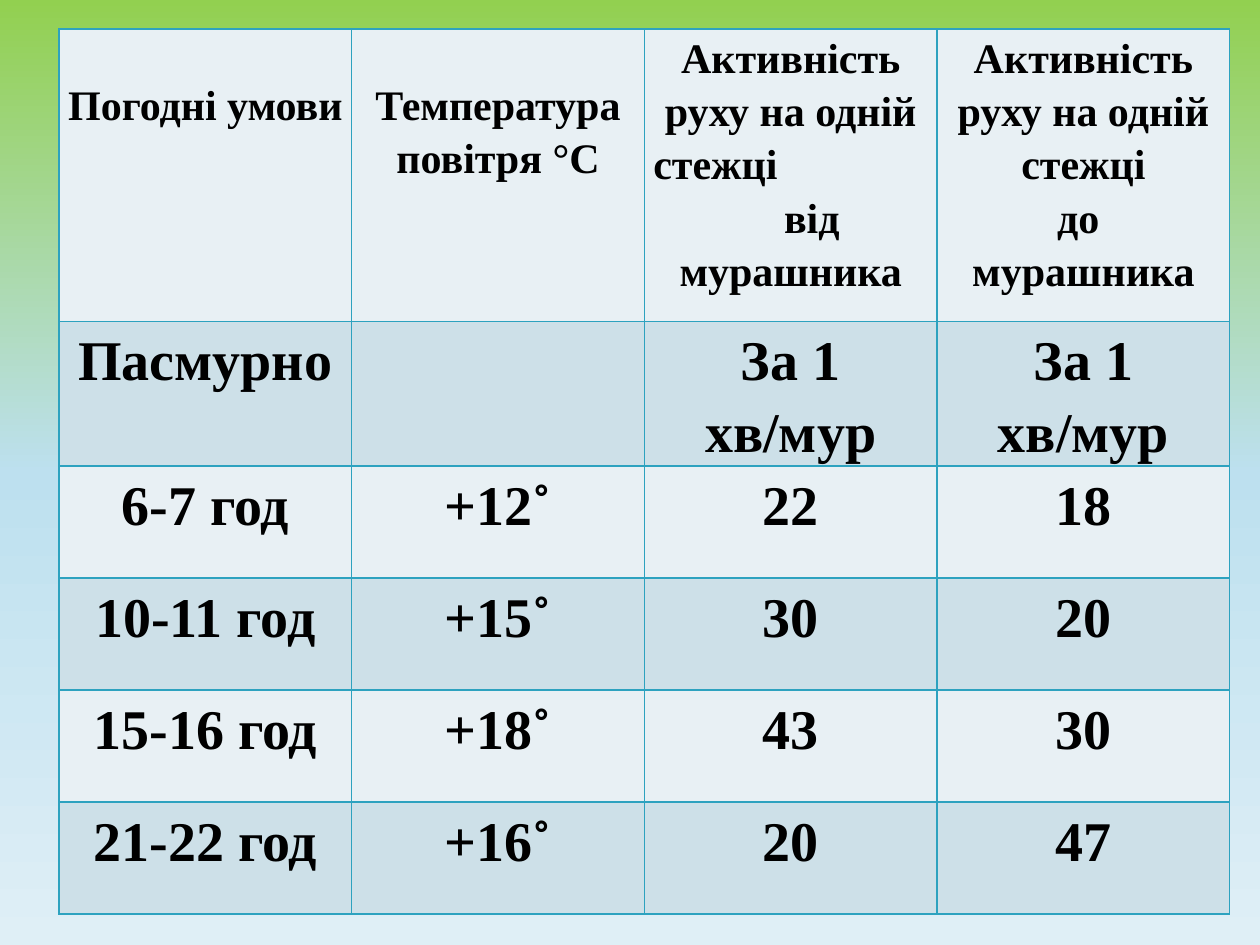
from copy import deepcopy

from lxml import etree
from pptx import Presentation
from pptx import util as u
from pptx.dml.color import RGBColor
from pptx.enum import text
from pptx.oxml import ns

FONT = "Times New Roman"
CENTER, LEFT = text.PP_ALIGN.CENTER, text.PP_ALIGN.LEFT


def color(code):
    return RGBColor.from_string(code)


def write(cell, content, size=32, align=CENTER, indent=0, new=False):
    para = cell.text_frame.add_paragraph() if new else cell.text_frame.paragraphs[0]
    para.alignment = align
    para.line_spacing = 1.15
    if indent:
        para._p.get_or_add_pPr().set("marL", str(u.Cm(indent)))
    span = para.add_run()
    span.text = content
    span.font.name = FONT
    span.font.size = u.Pt(size)
    span.font.bold = True
    span.font.color.rgb = color("000000")


deck = Presentation()
deck.slide_width, deck.slide_height = u.Cm(25.4), u.Cm(19.05)
page = deck.slides.add_slide(deck.slide_layouts[6])

# Background: three-stop gradient from top to bottom
backdrop = page.background.fill
backdrop.gradient()
backdrop.gradient_angle = 270
stop_list = next(page.element.iter(ns.qn("a:gsLst")))
stop_list.insert(1, deepcopy(stop_list[0]))
for stop, place, code in zip(backdrop.gradient_stops, (0, 0.5, 1),
                             ("92D050", "BDE0EF", "DFEFF6")):
    stop.position = place
    stop.color.rgb = color(code)

# Table grid
heights = [5.9, 2.91] + [2.26] * 4
table = page.shapes.add_table(6, 4, u.Cm(1.19), u.Cm(0.58),
                              u.Cm(23.6), u.Cm(sum(heights))).table
for column in table.columns:
    column.width = u.Cm(5.9)
for row, height in zip(table.rows, heights):
    row.height = u.Cm(height)

# Cell margins, alternating fills and borders
for number, row in enumerate(table.rows):
    for cell in row.cells:
        cell.margin_left = cell.margin_right = u.Cm(0.18)
        cell.margin_top = cell.margin_bottom = 0
        props = cell._tc.get_or_add_tcPr()
        for side in ("lnL", "lnR", "lnT", "lnB"):
            line = etree.SubElement(props, ns.qn(f"a:{side}"), w=str(u.Pt(1)))
            paint = etree.SubElement(line, ns.qn("a:solidFill"))
            etree.SubElement(paint, ns.qn("a:srgbClr"), val="2DA2BF")
        cell.fill.solid()
        cell.fill.fore_color.rgb = color("CDE0E8" if number % 2 else "E8F0F4")

# Header row: each line is its text and any special format
headers = [
    [("Погодні умови", {})],
    [("Температура повітря °С", {})],
    [("Активність руху на одній", {}), ("стежці", {"align": LEFT}),
     ("від", {"indent": 0.85}), ("мурашника", {})],
    [("Активність руху на одній стежці", {}), ("до ", {}), ("мурашника", {})],
]
for column, lines in enumerate(headers):
    cell = table.cell(0, column)
    if column < 2:
        cell.margin_top = u.Cm(0.95)
    for index, (content, options) in enumerate(lines):
        write(cell, content, size=24, new=index > 0, **options)

# Observations
observations = [
    ("Пасмурно", "", "За 1 хв/мур", "За 1 хв/мур"),
    ("6-7 год", "+12˚", "22", "18"),
    ("10-11 год", "+15˚", "30", "20"),
    ("15-16 год", "+18˚", "43", "30"),
    ("21-22 год", "+16˚", "20", "47"),
]
for number, values in enumerate(observations, start=1):
    for column, value in enumerate(values):
        if value:
            write(table.cell(number, column), value)

deck.save("out.pptx")
